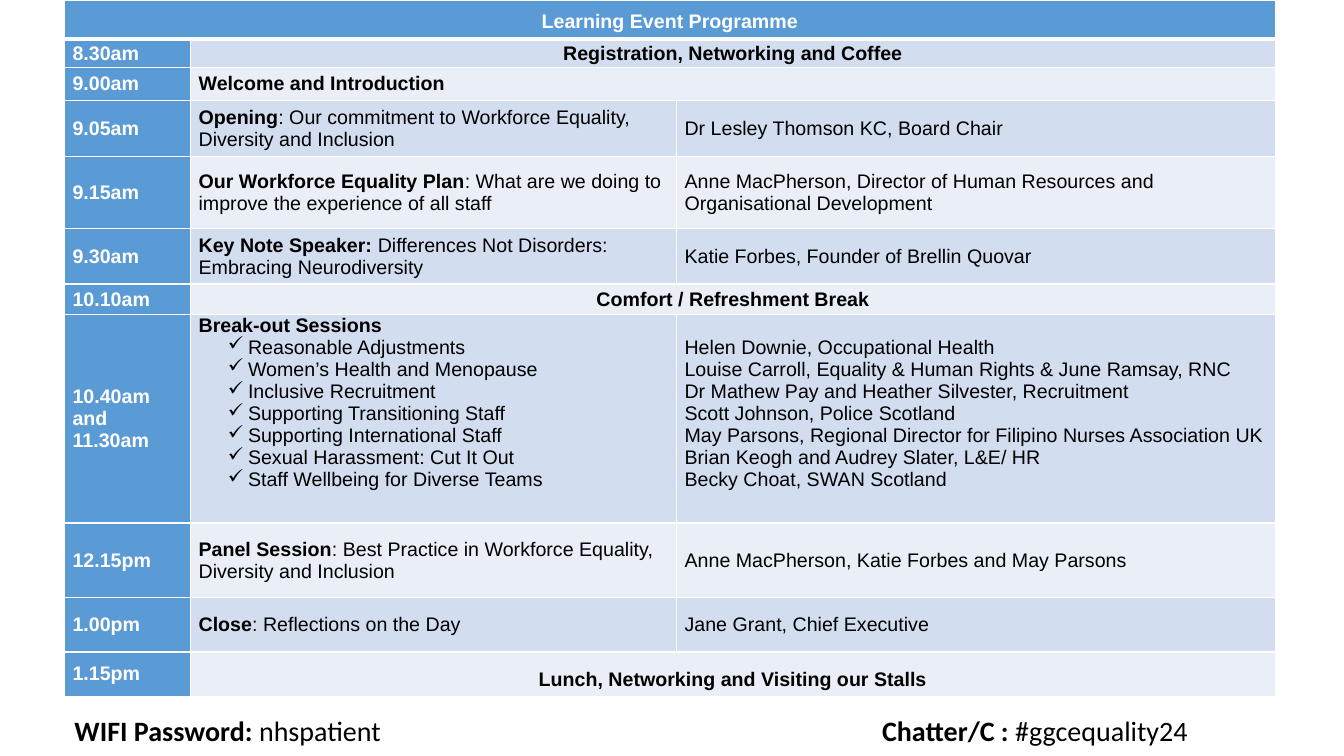
import pptx
import pptx.dml.color
import pptx.enum.text
import pptx.util
from lxml import etree
from pptx.oxml.ns import qn

WIDTH = pptx.util.Inches(13.33)
HEIGHT = pptx.util.Inches(7.5)
LEFT_SHARE = 4.8
COLUMN_SHARES = [9.38, 36.16, 44.56]
HEADING_SHARE = 5.2
WHITE, BLACK, BLUE = "FFFFFF", "000000", "5B9BD5"
BANDS = ["EAEFF7", "D2DEEF"]
LEFT = pptx.enum.text.PP_ALIGN.LEFT
CENTER = pptx.enum.text.PP_ALIGN.CENTER
TOP = pptx.enum.text.MSO_ANCHOR.TOP
MIDDLE = pptx.enum.text.MSO_ANCHOR.MIDDLE

TOPICS = [
    "Reasonable Adjustments",
    "Women’s Health and Menopause",
    "Inclusive Recruitment",
    "Supporting Transitioning Staff",
    "Supporting International Staff",
    "Sexual Harassment: Cut It Out",
    "Staff Wellbeing for Diverse Teams",
]
HOSTS = [
    "Helen Downie, Occupational Health",
    "Louise Carroll, Equality & Human Rights & June Ramsay, RNC",
    "Dr Mathew Pay and Heather Silvester, Recruitment",
    "Scott Johnson, Police Scotland",
    "May Parsons, Regional Director for Filipino Nurses Association UK",
    "Brian Keogh and Audrey Slater, L&E/ HR",
    "Becky Choat, SWAN Scotland",
]
PROGRAMME = [
    (3.73, "8.30am", "Registration, Networking and Coffee", "", None),
    (4.4, "9.00am", "Welcome and Introduction", "", None),
    (7.33, "9.05am", "Opening",
     ": Our commitment to Workforce Equality, Diversity and Inclusion",
     ["Dr Lesley Thomson KC, Board Chair"]),
    (9.6, "9.15am", "Our Workforce Equality Plan",
     ": What are we doing to improve the experience of all staff",
     ["Anne MacPherson, Director of Human Resources and Organisational Development"]),
    (7.33, "9.30am", "Key Note Speaker: ",
     "Differences Not Disorders: Embracing Neurodiversity",
     ["Katie Forbes, Founder of Brellin Quovar"]),
    (4, "10.10am", "Comfort / Refreshment Break", "", None),
    (27.6, "10.40am and 11.30am", "Break-out Sessions", "", HOSTS),
    (9.87, "12.15pm", "Panel Session",
     ": Best Practice in Workforce Equality, Diversity and Inclusion",
     ["Anne MacPherson, Katie Forbes and May Parsons"]),
    (7.2, "1.00pm", "Close", ": Reflections on the Day",
     ["Jane Grant, Chief Executive"]),
    (5.87, "1.15pm", "Lunch, Networking and Visiting our Stalls", "", None),
]
CENTRED = {"8.30am", "10.10am", "1.15pm"}


def across(percent):
    return round(WIDTH * percent / 100)


def down(percent):
    return round(HEIGHT * percent / 100)


def rgb(value):
    return pptx.dml.color.RGBColor.from_string(value)


def add_run(paragraph, text, bold, color=BLACK, size=14, face="Arial"):
    run = paragraph.add_run()
    run.text = text
    run.font.name = face
    run.font.size = pptx.util.Pt(size)
    run.font.bold = bold
    run.font.color.rgb = rgb(color)


def add_tick(paragraph):
    properties = paragraph._p.get_or_add_pPr()
    properties.set("marL", str(pptx.util.Inches(0.49)))
    properties.set("indent", str(pptx.util.Inches(-0.2)))
    etree.SubElement(properties, qn("a:buChar")).set("char", "✓")


def draw_borders(cell, top=1, bottom=1):
    properties = cell._tc.get_or_add_tcPr()
    for side, points in zip("LRTB", (1, 1, top, bottom)):
        line = etree.SubElement(properties, qn("a:ln" + side))
        line.set("w", str(pptx.util.Pt(points)))
        fill = etree.SubElement(line, qn("a:solidFill"))
        etree.SubElement(fill, qn("a:srgbClr")).set("val", WHITE)


def style_cell(cell, fill, top=1, bottom=1):
    draw_borders(cell, top, bottom)
    cell.fill.solid()
    cell.fill.fore_color.rgb = rgb(fill)
    cell.margin_left = cell.margin_right = pptx.util.Inches(0.08)
    cell.margin_top = cell.margin_bottom = 0


def write_cell(cell, paragraphs, align=LEFT, anchor=MIDDLE, color=BLACK, spacing=1.0):
    cell.vertical_anchor = anchor
    for index, runs in enumerate(paragraphs):
        frame = cell.text_frame
        paragraph = frame.add_paragraph() if index else frame.paragraphs[0]
        paragraph.alignment = align
        paragraph.line_spacing = spacing
        for text, bold in runs:
            add_run(paragraph, text, bold, color)


def add_heading(table):
    for cell in table.rows[0].cells:
        style_cell(cell, BLUE, bottom=3)
    heading = table.cell(0, 0)
    heading.merge(table.cell(0, 2))
    write_cell(heading, [[("Learning Event Programme", True)]], CENTER, TOP, WHITE, 1.5)


def add_session(table, row, time, title, detail, speakers):
    for column, cell in enumerate(table.rows[row].cells):
        style_cell(cell, BANDS[row % 2] if column else BLUE, top=3 if row == 1 else 1)
    time_cell, session, speaker_cell = table.rows[row].cells
    write_cell(time_cell, [[(time, True)]], color=WHITE)
    breakout = speakers is HOSTS
    anchor = TOP if breakout else MIDDLE
    paragraphs = [[(title, True)] + ([(detail, False)] if detail else [])]
    if breakout:
        paragraphs += [[(topic, False)] for topic in TOPICS]
    write_cell(session, paragraphs, CENTER if time in CENTRED else LEFT, anchor,
               spacing=1.5 if row == len(PROGRAMME) else 1.0)
    if speakers is None:
        session.merge(speaker_cell)
        return
    write_cell(speaker_cell, [[(name, False)] for name in speakers], anchor=anchor)
    if breakout:
        speaker_cell.margin_top = pptx.util.Inches(0.22)
        for paragraph in session.text_frame.paragraphs[1:]:
            add_tick(paragraph)


def add_programme(slide):
    shares = [HEADING_SHARE] + [session[0] for session in PROGRAMME]
    table = slide.shapes.add_table(
        len(shares), len(COLUMN_SHARES), across(LEFT_SHARE), 0,
        across(sum(COLUMN_SHARES)), down(sum(shares))).table
    table.first_row = table.horz_banding = False
    for column, share in zip(table.columns, COLUMN_SHARES):
        column.width = across(share)
    for row, share in zip(table.rows, shares):
        row.height = down(share)
    add_heading(table)
    for row, session in enumerate(PROGRAMME, 1):
        add_session(table, row, *session[1:])


def add_footer(slide, left, label, value):
    box = slide.shapes.add_textbox(across(left), down(93.73), across(32.1), down(5.87))
    box.text_frame.word_wrap = True
    paragraph = box.text_frame.paragraphs[0]
    add_run(paragraph, label, True, size=20, face="Calibri")
    add_run(paragraph, value, False, size=20, face="Calibri")


def main():
    deck = pptx.Presentation()
    deck.slide_width, deck.slide_height = WIDTH, HEIGHT
    slide = deck.slides.add_slide(deck.slide_layouts[6])
    add_programme(slide)
    add_footer(slide, 64.9, "Chatter/C : ", "#ggcequality24")
    add_footer(slide, LEFT_SHARE, "WIFI Password: ", "nhspatient")
    deck.save("out.pptx")


if __name__ == "__main__":
    main()
